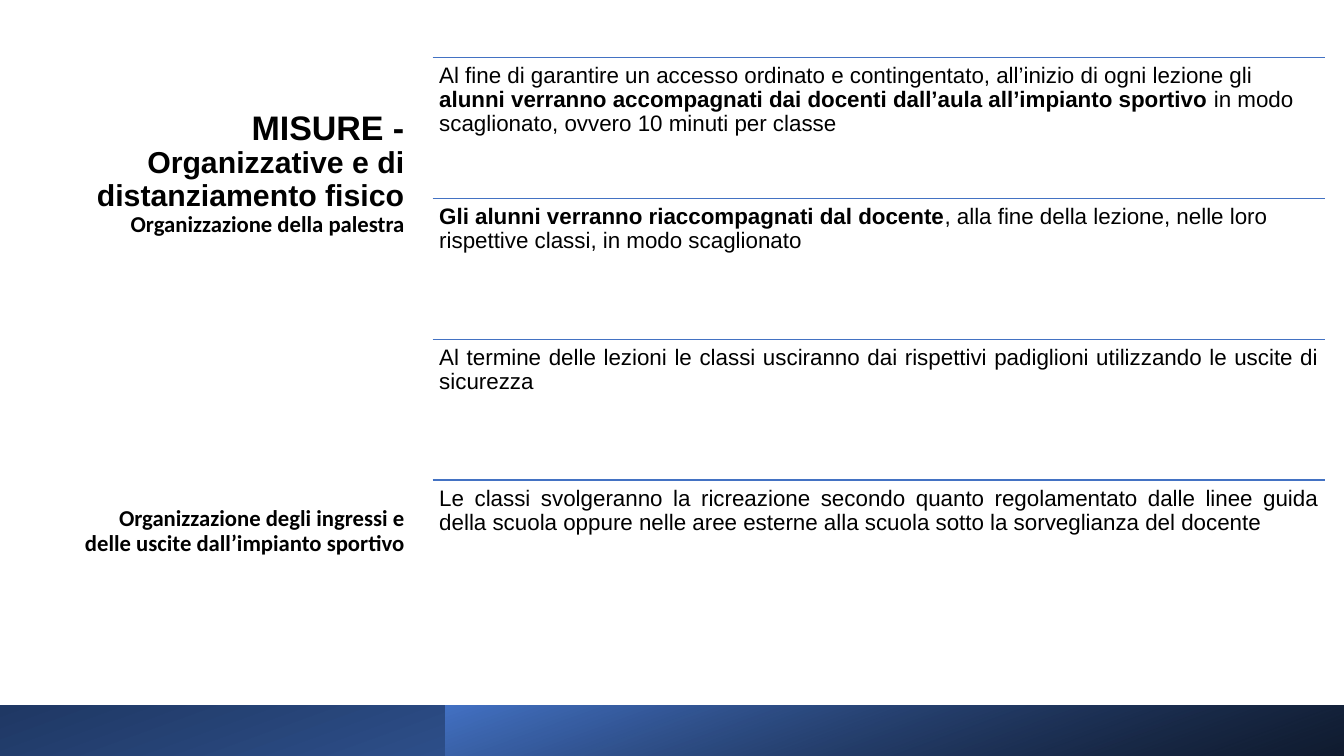
from dataclasses import dataclass

import pptx
import pptx.dml.color
import pptx.enum.dml
import pptx.enum.shapes
import pptx.enum.text
import pptx.oxml.ns
import pptx.shapes.autoshape
import pptx.slide
import pptx.text.text
import pptx.util
from lxml import etree

Cm = pptx.util.Cm
Pt = pptx.util.Pt
RGBColor = pptx.dml.color.RGBColor
PP_ALIGN = pptx.enum.text.PP_ALIGN
qn = pptx.oxml.ns.qn

BLACK = RGBColor(0x00, 0x00, 0x00)
BLUE = RGBColor(0x44, 0x72, 0xC4)
NAVY = RGBColor(0x1F, 0x38, 0x64)
RULE_BLUE = RGBColor(0x43, 0x72, 0xC3)

SLIDE_W, SLIDE_H = Cm(33.87), Cm(19.05)
ROW_LEFT, ROW_TOP = Cm(10.9), Cm(1.45)
ROW_W, ROW_H = Cm(22.5), Cm(3.55)
BAND_TOP, BAND_H = Cm(17.78), Cm(1.27)


@dataclass
class Run:
    text: str
    size: float = 16
    bold: bool = False
    font: str = "Arial"


@dataclass
class Para:
    runs: list[Run]
    align: PP_ALIGN = PP_ALIGN.LEFT
    before: float = 0


@dataclass
class Band:
    left: int
    rotation: int
    angle: int
    start: RGBColor
    end: RGBColor
    start_opacity: int = 100


TITLE = [
    Para([Run("MISURE - ", 24.3, True),
          Run("Organizzative e di distanziamento fisico", 21.6, True)], PP_ALIGN.RIGHT),
    Para([Run("Organizzazione della palestra", 16.2, True, "Calibri")], PP_ALIGN.RIGHT),
    Para([Run("Organizzazione degli ingressi e delle uscite dall’impianto sportivo ",
              16.2, True, "Calibri")], PP_ALIGN.RIGHT, before=192.5),
]

MEASURES = [
    Para([Run("Al fine di garantire un accesso ordinato e contingentato, "
              "all’inizio di ogni lezione gli "),
          Run("alunni verranno accompagnati dai docenti dall’aula "
              "all’impianto sportivo ", bold=True),
          Run("in modo scaglionato, ovvero 10 minuti per classe")]),
    Para([Run("Gli alunni verranno riaccompagnati dal docente", bold=True),
          Run(", alla fine della lezione, nelle loro rispettive classi, "
              "in modo scaglionato")]),
    Para([Run("Al termine delle lezioni le classi usciranno dai rispettivi padiglioni "
              "utilizzando le uscite di sicurezza")], PP_ALIGN.JUSTIFY),
    Para([Run("Le classi svolgeranno la ricreazione secondo quanto regolamentato dalle "
              "linee guida della scuola oppure nelle aree esterne alla scuola sotto la "
              "sorveglianza del docente")], PP_ALIGN.JUSTIFY),
]

BANDS = [
    Band(Cm(0), 180, 110, BLUE, NAVY),
    Band(Cm(11.23), 0, 290, BLACK, BLUE, start_opacity=76),
]


def set_all(obj: object, values: dict[str, object]) -> None:
    for name, value in values.items():
        setattr(obj, name, value)


def write_text(tf: pptx.text.text.TextFrame, paras: list[Para],
               inset_x: int, inset_y: int) -> None:
    set_all(tf, {
        "word_wrap": True,
        "auto_size": pptx.enum.text.MSO_AUTO_SIZE.NONE,
        "vertical_anchor": pptx.enum.text.MSO_ANCHOR.TOP,
        "margin_left": inset_x, "margin_right": inset_x,
        "margin_top": inset_y, "margin_bottom": inset_y,
    })
    for i, para in enumerate(paras):
        p = tf.add_paragraph() if i else tf.paragraphs[0]
        set_all(p, {"alignment": para.align, "line_spacing": 0.9,
                    "space_before": Pt(para.before), "space_after": Pt(0)})
        for run in para.runs:
            r = p.add_run()
            r.text = run.text
            set_all(r.font, {"name": run.font, "size": Pt(run.size), "bold": run.bold})
            r.font.color.rgb = BLACK


def add_band(s: pptx.slide.Slide, band: Band) -> None:
    """Draw a footer band from its left edge to the right edge of the slide."""
    sp = s.shapes.add_shape(pptx.enum.shapes.MSO_SHAPE.RECTANGLE,
                            band.left, BAND_TOP, SLIDE_W - band.left, BAND_H)
    sp.shadow.inherit = False
    sp.rotation = band.rotation
    sp.element.spPr.find(qn("a:xfrm")).set("flipH", "1")
    sp.line.fill.background()
    sp.fill.gradient()
    sp.fill.gradient_angle = 360 - band.angle
    first, last = sp.fill.gradient_stops
    set_all(first, {"position": 0})
    set_all(last, {"position": 1})
    first.color.rgb = band.start
    last.color.rgb = band.end
    if band.start_opacity < 100:
        colour = next(sp.element.spPr.iter(qn("a:srgbClr")))
        etree.SubElement(colour, qn("a:alpha")).set("val", str(band.start_opacity * 1000))


def add_measure(s: pptx.slide.Slide, para: Para, top: int) -> None:
    """Draw one row: a rule with its text below."""
    rule = s.shapes.add_connector(pptx.enum.shapes.MSO_CONNECTOR.STRAIGHT,
                                  ROW_LEFT, top, ROW_LEFT + ROW_W, top)
    rule.line.color.rgb = RULE_BLUE
    rule.line.width = Pt(1)
    etree.SubElement(rule.element.spPr, qn("a:effectLst"))
    box = s.shapes.add_textbox(ROW_LEFT, top, ROW_W, ROW_H)
    write_text(box.text_frame, [para], Cm(0.17), Cm(0.17))


def main() -> None:
    prs = pptx.Presentation()
    set_all(prs, {"slide_width": SLIDE_W, "slide_height": SLIDE_H})
    s = prs.slides.add_slide(prs.slide_layouts[5])
    title = s.shapes.title
    set_all(title, {"left": Cm(1.83), "top": Cm(2.67),
                    "width": Cm(8.61), "height": Cm(12.29)})
    write_text(title.text_frame, TITLE, Cm(0.25), Cm(0.13))
    for band in BANDS:
        add_band(s, band)
    for i, para in enumerate(MEASURES):
        add_measure(s, para, ROW_TOP + i * ROW_H)
    prs.save("out.pptx")


if __name__ == "__main__":
    main()
